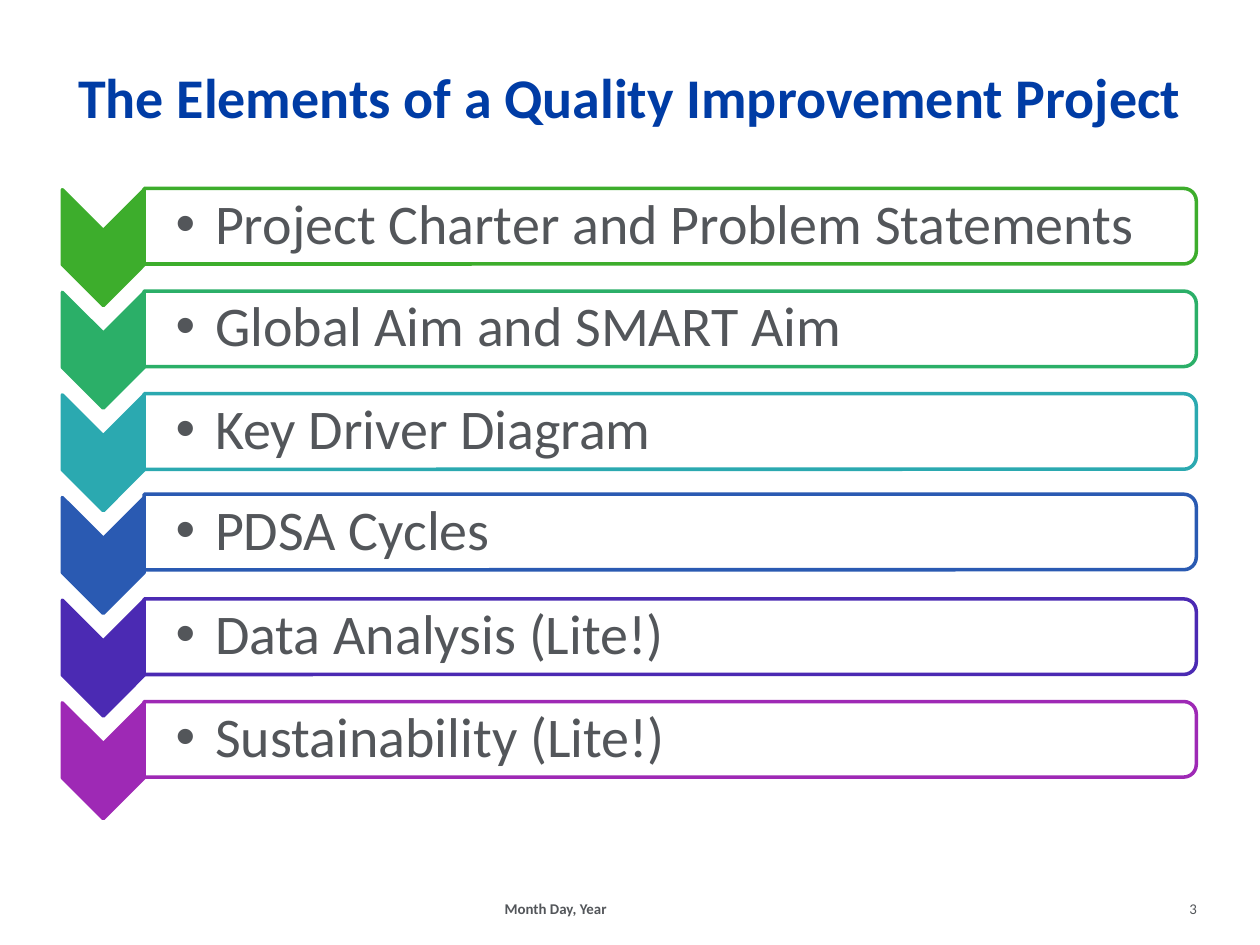
from dataclasses import dataclass

import pptx
import pptx.dml.color
import pptx.enum.shapes
import pptx.enum.text
import pptx.oxml
import pptx.oxml.ns
import pptx.util
from pptx.util import Pt

ALIGN = pptx.enum.text.PP_ALIGN
ANCHOR = pptx.enum.text.MSO_ANCHOR
PRESET = pptx.enum.shapes.MSO_SHAPE


@dataclass(frozen=True)
class Theme:
    font: str = "Calibri"
    title_color: str = "003CA5"
    text_color: str = "53565A"
    panel_color: str = "FFFFFF"
    panel_opacity: int = 90
    title_size: float = 32
    element_size: float = 32
    footer_size: float = 8.5
    outline: float = 2


THEME = Theme()

# Element, colour, and how far its panel sits off the even row spacing
ELEMENTS = [
    ("Project Charter and Problem Statements", "3DAD2C", 0),
    ("Global Aim and SMART Aim", "2BAF68", 0),
    ("Key Driver Diagram", "2BA9B0", 0),
    ("PDSA Cycles", "2A5AB2", -1.2),
    ("Data Analysis (Lite!)", "4B2AB3", 0),
    ("Sustainability (Lite!)", "9E29B5", 0),
]


def rgb(value):
    return pptx.dml.color.RGBColor.from_string(value)


def add_text(shapes, box, text, size, color, align, anchor, bold=False, insets=(0, 0, 0, 0)):
    """Place one line of text in box (left, top, width, height); return its paragraph."""
    frame = shapes.add_textbox(*map(Pt, box)).text_frame
    frame.word_wrap = True
    frame.vertical_anchor = anchor
    frame.margin_left, frame.margin_top, frame.margin_right, frame.margin_bottom = map(Pt, insets)
    paragraph = frame.paragraphs[0]
    paragraph.alignment = align
    run = paragraph.add_run()
    run.text = text
    run.font.name = THEME.font
    run.font.size = Pt(size)
    run.font.bold = bold
    run.font.color.rgb = rgb(color)
    return paragraph


def add_bullet(paragraph, indent):
    properties = paragraph._p.get_or_add_pPr()
    properties.set("marL", str(Pt(indent)))
    properties.set("indent", str(Pt(-indent)))
    namespace = pptx.oxml.ns.nsdecls("a")
    properties.append(pptx.oxml.parse_xml(f'<a:buFont {namespace} typeface="Arial"/>'))
    properties.append(pptx.oxml.parse_xml(f'<a:buChar {namespace} char="•"/>'))


def add_turned_shape(shapes, preset, box, fill, line):
    """Add a preset turned a quarter clockwise so that it covers box as seen."""
    left, top, width, height = box
    shift = (width - height) / 2
    shape = shapes.add_shape(preset, Pt(left + shift), Pt(top - shift), Pt(height), Pt(width))
    shape.rotation = 90
    shape.shadow.inherit = False
    shape.fill.solid()
    shape.fill.fore_color.rgb = rgb(fill)
    shape.line.color.rgb = rgb(line)
    shape.line.width = Pt(THEME.outline)
    return shape


def set_opacity(shape, percent):
    color = shape._element.spPr.find(".//" + pptx.oxml.ns.qn("a:srgbClr"))
    namespace = pptx.oxml.ns.nsdecls("a")
    color.append(pptx.oxml.parse_xml(f'<a:alpha {namespace} val="{percent * 1000}"/>'))


def add_element(shapes, box, text, color, panel_shift):
    """One row: a downward chevron at the left and an outlined panel with its text."""
    left, top, width, height = box
    chevron_width, panel_height = 46.8, 43.2
    add_turned_shape(shapes, PRESET.CHEVRON, (left, top, chevron_width, height), color, color)

    panel_left, panel_top = left + chevron_width, top - 0.7 + panel_shift
    panel_width = width - chevron_width
    panel = add_turned_shape(shapes, PRESET.ROUND_2_SAME_RECTANGLE,
                             (panel_left, panel_top, panel_width, panel_height),
                             THEME.panel_color, color)
    set_opacity(panel, THEME.panel_opacity)

    text_box = (panel_left, panel_top + 2.1, panel_width - 2.1, panel_height - 4.2)
    paragraph = add_text(shapes, text_box, text, THEME.element_size, THEME.text_color,
                         ALIGN.LEFT, ANCHOR.MIDDLE, insets=(18, 1.6, 1.6, 1.6))
    paragraph.line_spacing = 0.9
    paragraph.space_after = Pt(0.15 * THEME.element_size)
    add_bullet(paragraph, 22.5)


def add_element_list(slide, box):
    left, top, width, height = box
    chevron_height = 66.2
    pitch = (height - chevron_height) / (len(ELEMENTS) - 1)
    shapes = slide.shapes.add_group_shape().shapes
    for row, (text, color, panel_shift) in enumerate(ELEMENTS):
        row_box = (left, top + row * pitch, width, chevron_height)
        add_element(shapes, row_box, text, color, panel_shift)


def add_title(slide, box):
    add_text(slide.shapes, box, "The Elements of a Quality Improvement Project",
             THEME.title_size, THEME.title_color, ALIGN.CENTER, ANCHOR.TOP, bold=True)


def add_footer(slide, box):
    left, top, width, height = box
    add_text(slide.shapes, (left + 224, top + 8, 115, 14.4), "Month Day, Year",
             THEME.footer_size, THEME.text_color, ALIGN.CENTER, ANCHOR.BOTTOM, bold=True)
    add_text(slide.shapes, (left + width - 58, top, 58, height), "3",
             THEME.footer_size, THEME.text_color, ALIGN.RIGHT, ANCHOR.BOTTOM)


def main():
    presentation = pptx.Presentation()
    presentation.slide_width, presentation.slide_height = Pt(720), Pt(540)
    slide = presentation.slides.add_slide(presentation.slide_layouts[6])
    add_title(slide, (36, 36, 648, 62.6))
    add_element_list(slide, (35.6, 108.4, 648, 359.4))
    add_footer(slide, (36, 501.8, 648, 22.4))
    presentation.save("out.pptx")


if __name__ == "__main__":
    main()
